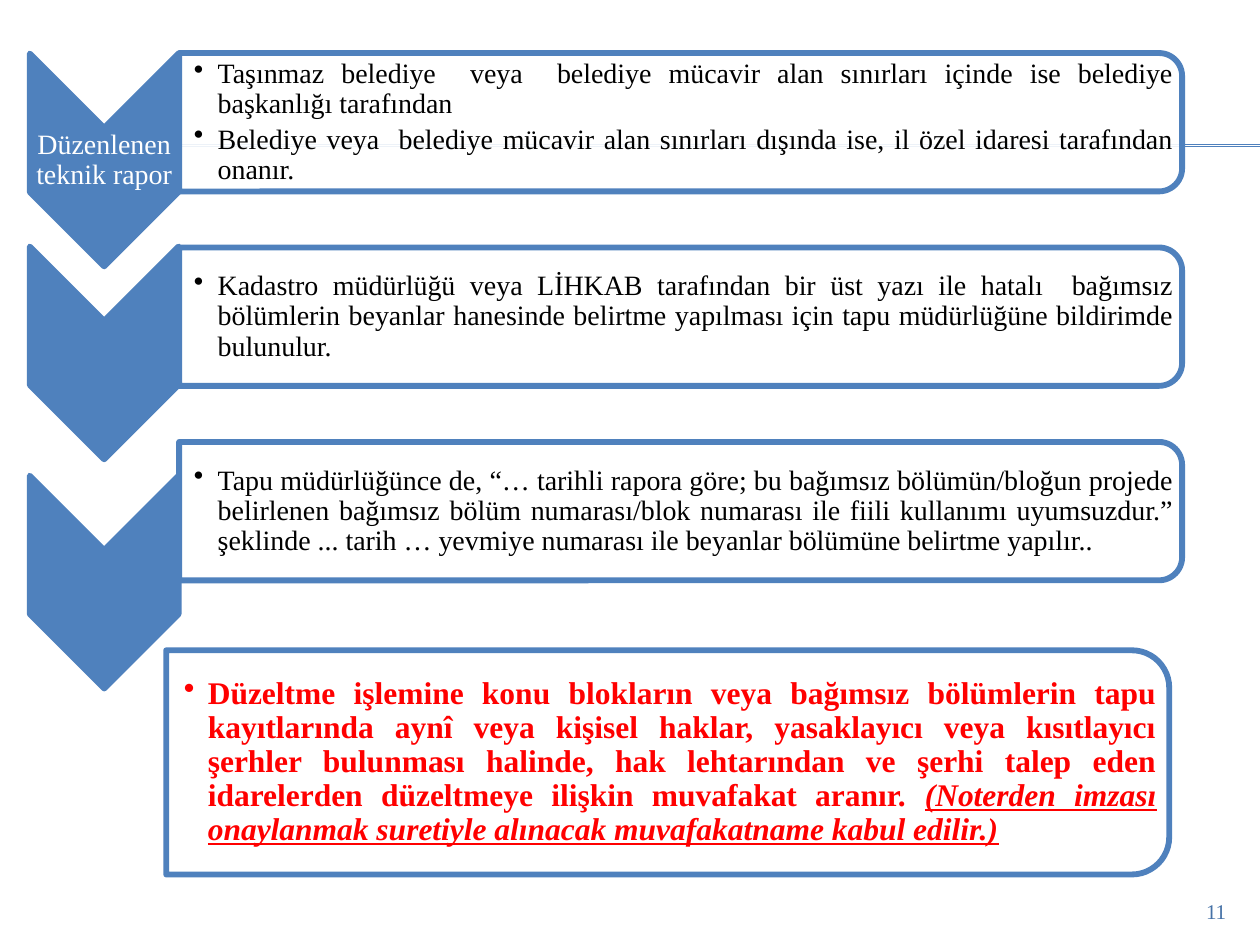
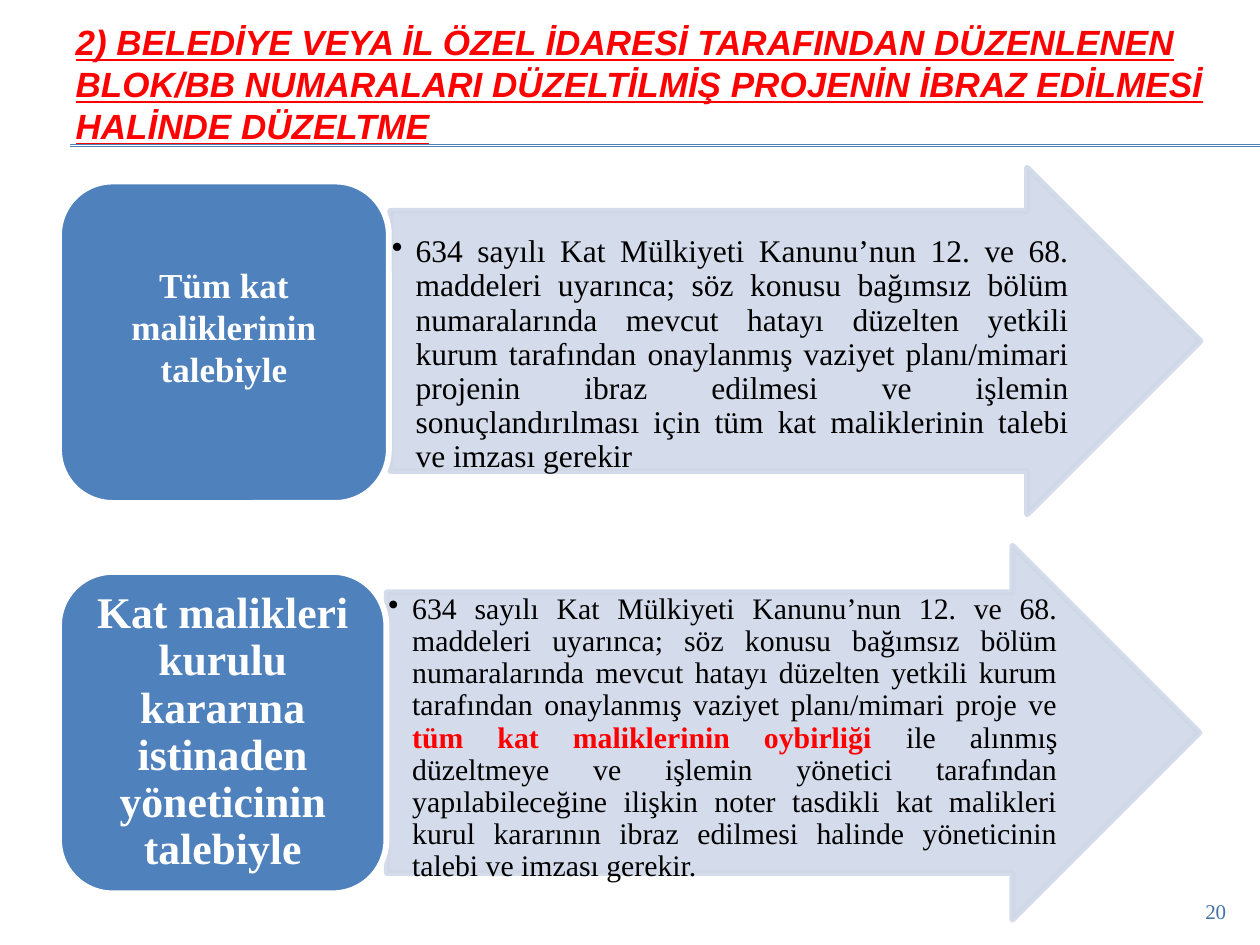
"""Builds two slides on correcting unit and block numbers in the land registry."""
from lxml.etree import SubElement
from pptx import Presentation
from pptx.dml.color import RGBColor
from pptx.enum.shapes import MSO_CONNECTOR, MSO_SHAPE as Preset
from pptx.enum.text import MSO_ANCHOR as Anchor, MSO_AUTO_SIZE as AutoSize, PP_ALIGN as Align
from pptx.oxml.ns import qn
from pptx.util import Cm, Pt

COLORS = {"blue": "4F81BD", "pale": "D0D8E8", "white": "FFFFFF",
          "black": "000000", "red": "FF0000", "number": "4672A7"}
BODY_FONT, TITLE_FONT = "Times New Roman", "Arial"
OUTLINE = 3.35
HAIR = 0.03


def rgb(name):
    return RGBColor.from_string(COLORS[name])


class SlideBuilder:
    """Holds the shared style and draws on the current slide."""

    def __init__(self):
        self.deck = Presentation()
        self.deck.slide_width, self.deck.slide_height = Cm(25.4), Cm(19.05)
        self.page = None

    def new_page(self, number, title=None):
        self.page = self.deck.slides.add_slide(self.deck.slide_layouts[5 if title else 6])
        for height in (2.92, 2.95):
            self.rule(1.42, 25.4, height)
        if title:
            self.title(title)
        self.text_box((22.86, 17.98, 2.11, 0.69), [number], 12, "number",
                      Align.RIGHT, Anchor.TOP, (0.25, 0.13, 0.25, 0.13))

    def rule(self, start, end, height):
        line = self.page.shapes.add_connector(
            MSO_CONNECTOR.STRAIGHT, Cm(start), Cm(height), Cm(end), Cm(height))
        line.line.color.rgb = rgb("blue")
        line.line.width = Pt(0.75)
        SubElement(line._element.spPr, qn("a:effectLst"))

    def title(self, text):
        box = self.page.shapes.title
        box.left, box.top, box.width, box.height = Cm(1.27), Cm(0), Cm(24.13), Cm(3.38)
        box.text_frame.auto_size = AutoSize.NONE
        box.text_frame.vertical_anchor = Anchor.MIDDLE
        para = box.text_frame.paragraphs[0]
        para.alignment = Align.LEFT
        para.add_run().text = text
        self.style(para.font, "red", "biu")
        para.font.name, para.font.size = TITLE_FONT, Pt(20)

    def style(self, font, color, marks=""):
        font.color.rgb = rgb(color)
        font.bold, font.italic, font.underline = (mark in marks for mark in "biu")

    def shape(self, preset, frame, fill, outline, opacity=100, turned=False):
        left, top, width, height = frame
        if turned:
            left, top = left + (width - height) / 2, top + (height - width) / 2
            width, height = height, width
        shape = self.page.shapes.add_shape(preset, Cm(left), Cm(top), Cm(width), Cm(height))
        shape.rotation = 90 if turned else 0
        shape.shadow.inherit = False
        shape.fill.solid()
        shape.fill.fore_color.rgb = rgb(fill)
        shape.line.color.rgb = rgb(outline)
        shape.line.width = Pt(OUTLINE)
        if opacity < 100:
            shades = [shape._element.spPr.find(qn("a:solidFill"))[0]]
            if fill == outline:
                shades.append(shape._element.spPr.find(qn("a:ln")).find(qn("a:solidFill"))[0])
            for shade in shades:
                SubElement(shade, qn("a:alpha"), val=str(opacity * 1000))
        return shape

    def fill_text(self, shape, paragraphs, size, color, align, anchor, insets,
                  spacing=1.0, marks="", bullet=False):
        frame = shape.text_frame
        frame.word_wrap = True
        frame.vertical_anchor = anchor
        frame.margin_left, frame.margin_top, frame.margin_right, frame.margin_bottom = map(Cm, insets)
        for index, content in enumerate(paragraphs):
            para = frame.add_paragraph() if index else frame.paragraphs[0]
            para.alignment, para.line_spacing = align, spacing
            if index:
                para.space_before = Pt(size * 0.18)
            if bullet:
                props = para._p.get_or_add_pPr()
                props.set("marL", str(Cm(0.48)))
                props.set("indent", str(Cm(-0.48)))
                SubElement(props, qn("a:buChar"), char="•")
            para.font.name, para.font.size = BODY_FONT, Pt(size)
            if isinstance(content, str):
                para.add_run().text = content
                self.style(para.font, color, marks)
                continue
            for text, span_color, span_marks in content:
                span = para.add_run()
                span.text = text
                self.style(span.font, span_color, span_marks)

    def text_box(self, frame, *text, **options):
        box = self.page.shapes.add_textbox(*map(Cm, frame))
        self.fill_text(box, *text, **options)

    def panel(self, left, top, height, paragraphs, size=16, indent=0.3):
        width, inset = 20.22, 0.05 * height
        self.shape(Preset.ROUND_2_SAME_RECTANGLE, (left, top, width, height),
                   "white", "blue", 90, turned=True)
        self.text_box((left, top + inset, width - inset, height - 2 * inset), paragraphs, size,
                      "black", Align.JUSTIFY, Anchor.MIDDLE, (indent, HAIR, HAIR, HAIR),
                      spacing=0.9, bullet=True)

    def chevron(self, top, caption=None):
        self.shape(Preset.CHEVRON, (0.6, top, 3, 4.29), "blue", "blue", turned=True)
        if caption:
            self.text_box((0.6, top + 1.5, 3, 1.3), [caption], 16, "white", Align.CENTER,
                          Anchor.MIDDLE, (HAIR,) * 4, spacing=0.9)

    def arrow(self, frame, content, size, top_inset=HAIR):
        arrow = self.shape(Preset.RIGHT_ARROW, frame, "pale", "pale", 90)
        arrow.adjustments[0], arrow.adjustments[1] = 0.75, 0.5
        self.fill_text(arrow, [content], size, "black", Align.JUSTIFY, Anchor.TOP,
                       (HAIR, top_inset, HAIR, HAIR), spacing=0.9, bullet=True)

    def label(self, frame, text, size, insets, spacing):
        label = self.shape(Preset.ROUNDED_RECTANGLE, frame, "blue", "white")
        self.fill_text(label, [text], size, "white", Align.CENTER, Anchor.MIDDLE, insets,
                       spacing=spacing, marks="b")


def build_approval_steps(builder):
    builder.new_page("11")
    steps = [
        (1.08, "Düzenlenen teknik rapor", [
            "Taşınmaz belediye  veya  belediye mücavir alan sınırları içinde ise belediye "
            "başkanlığı tarafından",
            "Belediye veya  belediye mücavir alan sınırları dışında ise, il özel idaresi "
            "tarafından onanır."]),
        (4.97, None, [
            "Kadastro müdürlüğü veya LİHKAB tarafından bir üst yazı ile hatalı  bağımsız "
            "bölümlerin beyanlar hanesinde belirtme yapılması için tapu müdürlüğüne "
            "bildirimde bulunulur."]),
        (9.59, None, [
            "Tapu müdürlüğünce de, “… tarihli rapora göre; bu bağımsız bölümün/bloğun projede "
            "belirlenen bağımsız bölüm numarası/blok numarası ile fiili kullanımı uyumsuzdur.” "
            "şeklinde ... tarih … yevmiye numarası ile beyanlar bölümüne belirtme yapılır.."]),
    ]
    for index, (chevron_top, caption, paragraphs) in enumerate(steps):
        builder.panel(3.61, 1.07 + 3.92 * index, 2.79, paragraphs)
        builder.chevron(chevron_top, caption)
    consent = [
        ("Düzeltme işlemine konu blokların veya bağımsız bölümlerin tapu kayıtlarında aynî veya "
         "kişisel haklar, yasaklayıcı veya kısıtlayıcı şerhler bulunması halinde, hak "
         "lehtarından ve şerhi talep eden idarelerden düzeltmeye ilişkin muvafakat aranır. ",
         "red", "b"),
        ("(Noterden imzası onaylanmak suretiyle alınacak muvafakatname kabul edilir.)",
         "red", "biu"),
    ]
    builder.panel(3.35, 13.11, 4.52, [consent], size=18, indent=0.36)


def build_project_requests(builder):
    builder.new_page("20", "2) BELEDİYE VEYA İL ÖZEL İDARESİ TARAFINDAN DÜZENLENEN BLOK/BB "
                           "NUMARALARI DÜZELTİLMİŞ PROJENİN İBRAZ EDİLMESİ HALİNDE DÜZELTME")
    legal_basis = ("634 sayılı Kat Mülkiyeti Kanunu’nun 12. ve 68. maddeleri uyarınca; söz konusu "
                   "bağımsız bölüm numaralarında mevcut hatayı düzelten yetkili kurum tarafından "
                   "onaylanmış vaziyet planı/mimari ")
    builder.arrow((7.87, 3.38, 16.33, 6.99), legal_basis +
                  "projenin ibraz edilmesi ve işlemin sonuçlandırılması için tüm kat "
                  "maliklerinin talebi ve imzası gerekir", 18, top_inset=0.5)
    builder.label((1.19, 3.66, 6.65, 6.48), "Tüm kat maliklerinin talebiyle", 20,
                  (0.2, 0.1, 0.2, 0.75), 1.0)
    builder.arrow((7.8, 11, 16.38, 7.54), [
        (legal_basis + "proje ve ", "black", ""),
        ("tüm kat maliklerinin oybirliği ", "red", "b"),
        ("ile alınmış düzeltmeye ve işlemin yönetici tarafından yapılabileceğine ilişkin noter "
         "tasdikli kat malikleri kurul kararının ibraz edilmesi halinde yöneticinin talebi ve "
         "imzası gerekir.", "black", "")], 17)
    builder.label((1.19, 11.53, 6.6, 6.48),
                  "Kat malikleri kurulu kararına istinaden yöneticinin talebiyle", 25,
                  (0.25, 0.13, 0.25, 0.13), 0.9)


def main():
    builder = SlideBuilder()
    build_approval_steps(builder)
    build_project_requests(builder)
    builder.deck.save("out.pptx")


if __name__ == "__main__":
    main()
